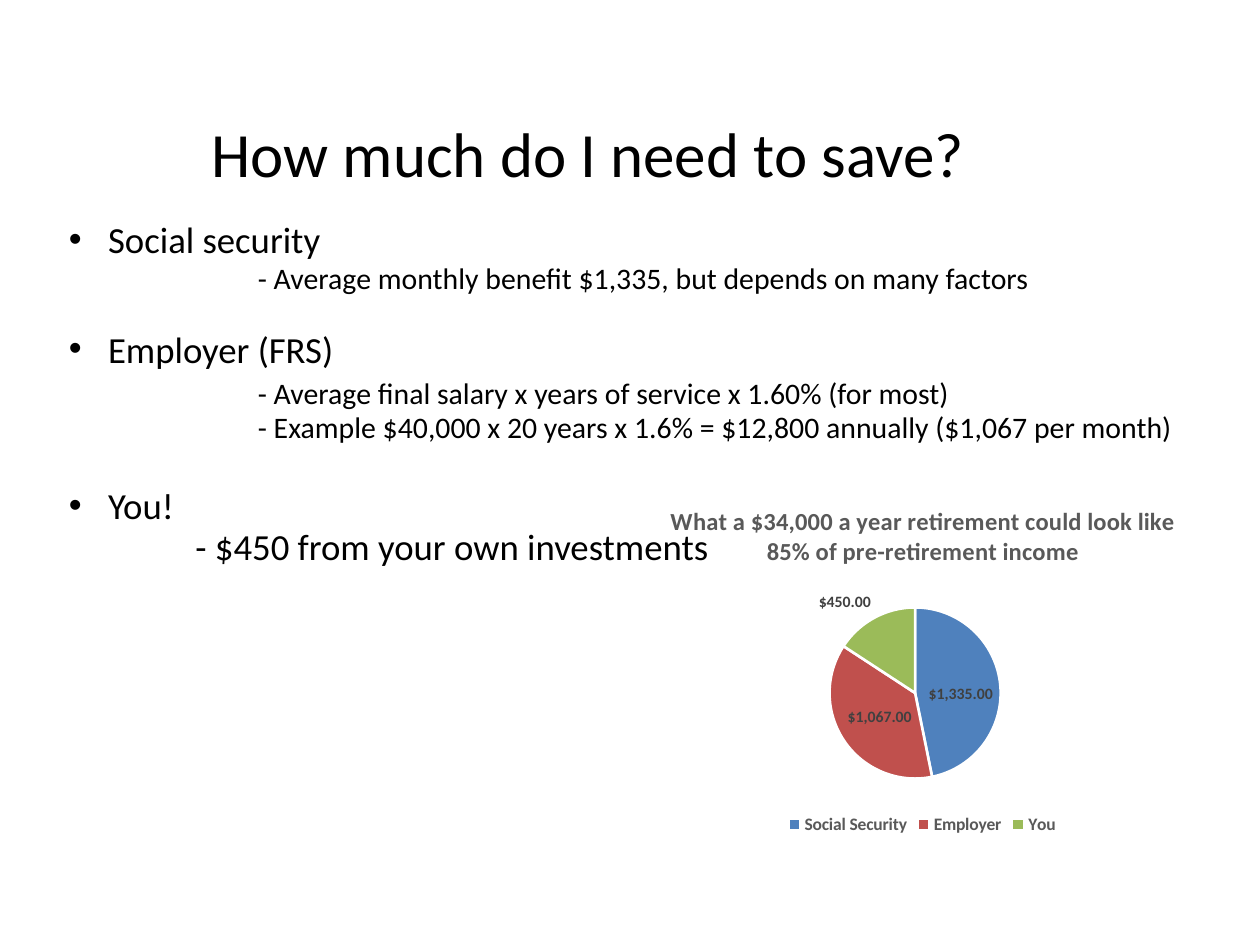
import pptx
import pptx.chart.data
import pptx.dml.color
import pptx.enum.chart
import pptx.enum.text
import pptx.oxml
import pptx.oxml.ns
import pptx.util

Cm, Pt = pptx.util.Cm, pptx.util.Pt
Spot = pptx.enum.chart.XL_LABEL_POSITION

HUES = {"ink": "000000", "edge": "FFFFFF", "head": "595959", "tag": "404040",
        "blue": "4F81BD", "red": "C0504D", "green": "9BBB59"}
FACE = "Calibri"

TITLE = "How much do I need to save?"
KINDS = {
    "main": {"size": 21, "left": 1.73, "hang": -0.79},
    "sub": {"size": 17, "left": 4.75, "hang": 0},
    "own": {"size": 21, "left": 3.49, "hang": 0},
}
LINES = [
    ("main", 0, "Social security"),
    ("sub", 3.2, "- Average monthly benefit $1,335, but depends on many factors"),
    ("main", 23, "Employer (FRS)"),
    ("sub", 6.4, "- Average final salary x years of service x 1.60% (for most)"),
    ("sub", 3.2, "- Example $40,000 x 20 years x 1.6% = $12,800 annually ($1,067 per month)"),
    ("main", 26.9, "You!"),
    ("own", 3.2, "- $450 from your own investments"),
]
HEADS = ["What a $34,000 a year retirement could look like",
         "85% of pre-retirement income"]
PARTS = [
    ("Social Security", 1335, "blue", Spot.INSIDE_END),
    ("Employer", 1067, "red", Spot.CENTER),
    ("You", 450, "green", Spot.OUTSIDE_END),
]


def tint(hue):
    return pptx.dml.color.RGBColor.from_string(HUES[hue])


def style(font, size, hue, bold=False):
    font.name, font.size, font.bold = FACE, Pt(size), bold
    font.color.rgb = tint(hue)


def add_run(para, text, size, hue, bold=False):
    run = para.add_run()
    run.text = text
    style(run.font, size, hue, bold)


def add_box(slide, left, top, wide, high):
    frame = slide.shapes.add_textbox(Cm(left), Cm(top), Cm(wide), Cm(high)).text_frame
    frame.word_wrap = True
    return frame


def add_lines(frame):
    for num, (kind, gap, text) in enumerate(LINES):
        form = KINDS[kind]
        para = frame.add_paragraph() if num else frame.paragraphs[0]
        props = para._p.get_or_add_pPr()
        props.set("marL", str(Cm(form["left"])))
        props.set("indent", str(Cm(form["hang"])))
        if kind == "main":
            mark = pptx.oxml.ns.nsdecls("a")
            props.append(pptx.oxml.parse_xml(f'<a:buFont {mark} typeface="Arial"/>'))
            props.append(pptx.oxml.parse_xml(f'<a:buChar {mark} char="•"/>'))
        para.line_spacing = 0.8
        para.space_before = Pt(gap)
        add_run(para, text, form["size"], "ink")


def place(node, index, **spots):
    for old in node.findall(pptx.oxml.ns.qn("c:layout")):
        node.remove(old)
    inner = '<c:layoutTarget val="inner"/>' if "w" in spots else ""
    modes = '<c:xMode val="edge"/><c:yMode val="edge"/>'
    sides = "".join(f'<c:{key} val="{val}"/>' for key, val in spots.items())
    node.insert(index, pptx.oxml.parse_xml(
        f'<c:layout {pptx.oxml.ns.nsdecls("c")}><c:manualLayout>'
        f'{inner}{modes}{sides}</c:manualLayout></c:layout>'))


def add_pie(slide):
    data = pptx.chart.data.CategoryChartData(number_format='"$"#,##0.00')
    data.categories = [part[0] for part in PARTS]
    data.add_series("Series 1", [part[1] for part in PARTS])
    chart = slide.shapes.add_chart(
        pptx.enum.chart.XL_CHART_TYPE.PIE,
        Cm(11.23), Cm(9.73), Cm(14.73), Cm(7.19), data).chart
    style(chart.font, 10, "ink")

    chart.has_title = True
    frame = chart.chart_title.text_frame
    for num, text in enumerate(HEADS):
        para = frame.add_paragraph() if num else frame.paragraphs[0]
        para.alignment = pptx.enum.text.PP_ALIGN.CENTER
        add_run(para, text, 14, "head", True)
    place(chart.chart_title._element, 1, x=0.15, y=0.05)

    chart.has_legend = True
    chart.legend.position = pptx.enum.chart.XL_LEGEND_POSITION.BOTTOM
    chart.legend.include_in_layout = False
    style(chart.legend.font, 10, "head", True)

    plot = chart.plots[0]
    plot.vary_by_categories = True
    plot.has_data_labels = True
    plot.data_labels.show_value = True
    plot.data_labels.show_percentage = False
    for num, (name, value, hue, spot) in enumerate(PARTS):
        point = plot.series[0].points[num]
        point.format.fill.solid()
        point.format.fill.fore_color.rgb = tint(hue)
        point.format.line.color.rgb = tint("edge")
        point.format.line.width = Pt(1.5)
        style(point.data_label.font, 9, "tag", True)
        point.data_label.position = spot
    area = chart._chartSpace.find(".//" + pptx.oxml.ns.qn("c:plotArea"))
    place(area, 0, x=0.37, y=0.35, w=0.24, h=0.48)


def main():
    deck = pptx.Presentation()
    deck.slide_width, deck.slide_height = Cm(25.4), Cm(19.05)
    slide = deck.slides.add_slide(deck.slide_layouts[6])
    head = add_box(slide, 4.01, 1.7, 21.39, 2.74)
    head.vertical_anchor = pptx.enum.text.MSO_ANCHOR.MIDDLE
    add_run(head.paragraphs[0], TITLE, 36, "ink")
    add_lines(add_box(slide, 0.2, 4.42, 25.2, 13.56))
    add_pie(slide)
    deck.save("out.pptx")


if __name__ == "__main__":
    main()
